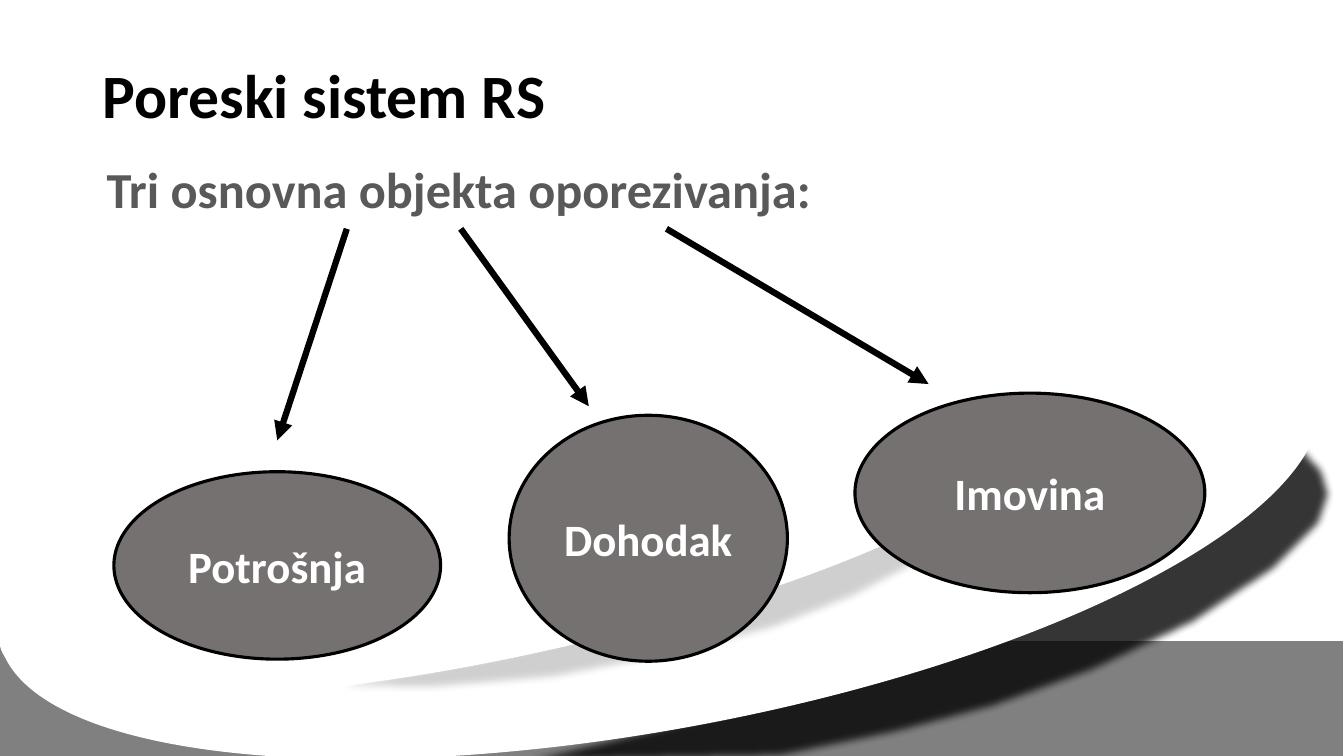
from lxml.etree import SubElement
from pptx import Presentation
from pptx.dml.color import RGBColor
from pptx.enum.shapes import MSO_CONNECTOR as CONN, MSO_SHAPE as SHAPE
from pptx.enum.text import MSO_ANCHOR as ANCHOR, PP_ALIGN as ALIGN
from pptx.oxml.ns import qn
from pptx.util import Inches, Pt

BLACK, WHITE, GREY, OVAL = "000000", "FFFFFF", "808080", "767171"
BIG_SHADE = [(4.6, 7.62), (7.8, 7.55), (8.93, 7.32), (9.92, 7.06), (10.91, 6.7),
             (11.9, 6.23), (12.7, 5.7), (13.14, 5.26), (13.26, 4.91), (13.17, 4.61),
             (12.95, 4.37), (12.6, 4.37), (10.91, 5.56), (8.93, 6.45), (6.94, 7.04)]
SMALL_SHADE = [(3.17, 6.75), (3.27, 6.87), (4.37, 6.88), (5.56, 6.78), (6.75, 6.55),
               (7.74, 6.29), (8.53, 5.98), (9.33, 5.56), (9.92, 4.96), (8.93, 4.96),
               (6.94, 5.85), (4.96, 6.4)]
ARROWS = [((3.44, 2.27), (2.75, 4.37)),
          ((4.57, 2.27), (5.84, 4.03)),
          ((6.61, 2.27), (9.21, 3.81))]
OBJECTS = [("Potrošnja", (1.13, 4.68, 3.24, 1.86)),
           ("Dohodak", (5.05, 4.12, 2.76, 2.44)),
           ("Imovina", (8.48, 3.9, 3.47, 1.98))]


def rgb(value):
    """Return the colour for a hex string."""
    return RGBColor.from_string(value)


def write(s, text, size, color, align=ALIGN.LEFT, anchor=ANCHOR.MIDDLE, spacing=1.0):
    """Put one bold paragraph into a shape."""
    tf = s.text_frame
    tf.word_wrap, tf.vertical_anchor = True, anchor
    p = tf.paragraphs[0]
    p.alignment, p.line_spacing = align, spacing
    r = p.add_run()
    r.text = text
    for name, value in {"name": "Calibri", "size": Pt(size), "bold": True}.items():
        setattr(r.font, name, value)
    r.font.color.rgb = rgb(color)


def add_text(slide, box, text, size, color, anchor):
    """Add a text box with one line of text."""
    s = slide.shapes.add_textbox(*map(Inches, box))
    write(s, text, size, color, anchor=anchor, spacing=0.9)


def add_filled(slide, kind, box, fill, rotation=0, line=None):
    """Add a preset shape with a plain fill and an optional outline."""
    s = slide.shapes.add_shape(kind, *map(Inches, box))
    s.shadow.inherit = False
    s.rotation = rotation
    s.fill.solid()
    s.fill.fore_color.rgb = rgb(fill)
    if line:
        s.line.color.rgb = rgb(line)
        s.line.width = Pt(2.25)
    else:
        s.line.fill.background()
    return s


def add_shade(slide, points, opacity):
    """Add a translucent crescent with a soft edge."""
    points = [(Inches(x), Inches(y)) for x, y in points]
    builder = slide.shapes.build_freeform(*points[0])
    builder.add_line_segments(points[1:], close=True)
    s = builder.convert_to_shape()
    s.shadow.inherit = False
    s.fill.solid()
    s.fill.fore_color.rgb = rgb(BLACK)
    s.line.fill.background()
    props = s._element.spPr
    color = props.find(qn("a:solidFill")).find(qn("a:srgbClr"))
    SubElement(color, qn("a:alpha"), val=str(opacity * 1000))
    SubElement(props.find(qn("a:effectLst")), qn("a:softEdge"), rad=str(Pt(6)))


def add_arrow(slide, start, end):
    """Add a thick line with a triangle at its end."""
    s = slide.shapes.add_connector(CONN.STRAIGHT, *map(Inches, start + end))
    s.line.color.rgb = rgb(BLACK)
    s.line.width = Pt(4.5)
    SubElement(s.line._get_or_add_ln(), qn("a:tailEnd"), type="triangle")
    SubElement(s._element.spPr, qn("a:effectLst"))


def main():
    """Build the slide and save it."""
    prs = Presentation()
    prs.slide_width, prs.slide_height = Inches(13.33), Inches(7.5)
    slide = prs.slides.add_slide(prs.slide_layouts[6])
    add_filled(slide, SHAPE.RECTANGLE, (-0.01, 6.36, 13.33, 1.21), GREY)
    add_shade(slide, BIG_SHADE, 79)
    add_filled(slide, SHAPE.OVAL, (-0.12, 3.02, 13.32, 4.21), WHITE, 169.4)
    add_shade(slide, SMALL_SHADE, 19)
    add_filled(slide, SHAPE.OVAL, (-0.13, 4, 10.69, 2.47), WHITE, 167.3)
    add_text(slide, (0.92, 0.61, 11.5, 0.73), "Poreski sistem RS", 44, BLACK, ANCHOR.MIDDLE)
    add_text(slide, (0.96, 1.59, 11.5, 5.06), "Tri osnovna objekta oporezivanja:", 36,
             "595959", ANCHOR.TOP)
    for start, end in ARROWS:
        add_arrow(slide, start, end)
    for text, box in OBJECTS:
        s = add_filled(slide, SHAPE.OVAL, box, OVAL, line=BLACK)
        write(s, text, 32, WHITE, ALIGN.CENTER)
    prs.save("out.pptx")


if __name__ == "__main__":
    main()
